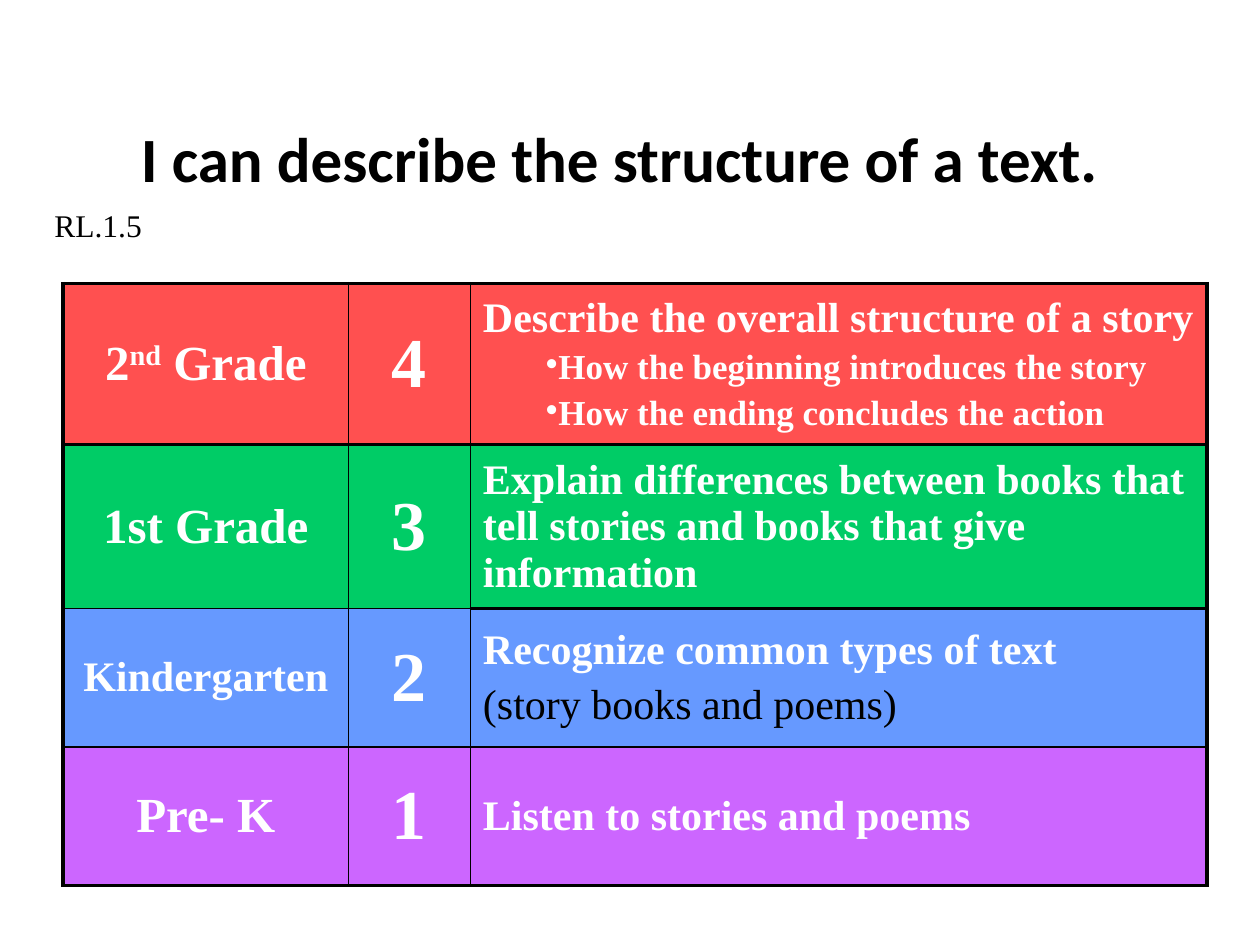
from dataclasses import dataclass

from lxml import etree
from pptx import Presentation
from pptx import util as u
from pptx.dml.color import RGBColor
from pptx.enum import text
from pptx.oxml import ns


@dataclass(frozen=True)
class Theme:
    heading_font: str = "Calibri"
    body_font: str = "Times New Roman"
    black: str = "000000"
    white: str = "FFFFFF"
    red: str = "FF5050"
    green: str = "00CC66"
    blue: str = "6699FF"
    purple: str = "CC66FF"
    title: int = 36
    score: int = 40
    grade: int = 28
    body: int = 24
    detail: int = 20
    label: int = 18
    thin: float = 1
    medium: float = 1.5
    thick: float = 2.25


@dataclass(frozen=True)
class Line:
    runs: tuple
    size: int
    color: str = Theme.white
    bold: bool = True
    centered: bool = False
    bullet: bool = False
    font: str = Theme.body_font


class SlideBuilder:
    def __init__(self, presentation, theme):
        self.theme = theme
        self.slide = presentation.slides.add_slide(presentation.slide_layouts[6])

    def add_lines(self, frame, lines):
        frame.word_wrap = True
        for index, line in enumerate(lines):
            paragraph = frame.add_paragraph() if index else frame.paragraphs[0]
            paragraph.alignment = text.PP_ALIGN.CENTER if line.centered else text.PP_ALIGN.LEFT
            paragraph.space_before = u.Pt(line.size * 0.2 if index else 0)
            if line.bullet:
                self.add_bullet(paragraph)
            for words, baseline in line.runs:
                run = paragraph.add_run()
                run.text = words
                run.font.name = line.font
                run.font.size = u.Pt(line.size)
                run.font.bold = line.bold
                run.font.color.rgb = RGBColor.from_string(line.color)
                if baseline:
                    run._r.get_or_add_rPr().set("baseline", str(baseline * 1000))

    def add_bullet(self, paragraph):
        paragraph.level = 1
        properties = paragraph._p.get_or_add_pPr()
        properties.set("marL", str(u.Pt(36)))
        properties.set("indent", "0")
        etree.SubElement(properties, ns.qn("a:buChar")).set("char", "•")

    def add_text_box(self, left, top, width, height, line, anchor):
        shape = self.slide.shapes.add_textbox(u.Pt(left), u.Pt(top), u.Pt(width), u.Pt(height))
        shape.text_frame.vertical_anchor = anchor
        self.add_lines(shape.text_frame, [line])

    def add_borders(self, cell, widths):
        properties = cell._tc.get_or_add_tcPr()
        for index, (side, width) in enumerate(zip("LRTB", widths)):
            border = etree.Element(ns.qn(f"a:ln{side}"), w=str(u.Pt(width)))
            fill = etree.SubElement(border, ns.qn("a:solidFill"))
            etree.SubElement(fill, ns.qn("a:srgbClr")).set("val", self.theme.black)
            properties.insert(index, border)

    def add_table(self, left, top, column_widths, row_heights, rows):
        theme = self.theme
        table = self.slide.shapes.add_table(
            len(row_heights), len(column_widths), u.Pt(left), u.Pt(top),
            u.Pt(sum(column_widths)), u.Pt(sum(row_heights))).table
        table.first_row = table.horz_banding = False
        for column, width in zip(table.columns, column_widths):
            column.width = u.Pt(width)
        for row, height in zip(table.rows, row_heights):
            row.height = u.Pt(height)
        verticals = [theme.thick, theme.thin, theme.thin, theme.thick]
        for row_index, (color, cells) in enumerate(rows):
            for column_index, lines in enumerate(cells):
                cell = table.cell(row_index, column_index)
                cell.fill.solid()
                cell.fill.fore_color.rgb = RGBColor.from_string(color)
                cell.vertical_anchor = text.MSO_ANCHOR.MIDDLE
                inner = theme.medium if column_index == 2 else theme.thin
                horizontals = [theme.thick, theme.medium, inner, inner, theme.medium]
                self.add_borders(cell, verticals[column_index:column_index + 2]
                                 + horizontals[row_index:row_index + 2])
                self.add_lines(cell.text_frame, lines)


def plain(words, size, **style):
    return Line(((words, 0),), size, **style)


def main():
    theme = Theme()
    presentation = Presentation()
    presentation.slide_width, presentation.slide_height = u.Pt(720), u.Pt(540)
    builder = SlideBuilder(presentation, theme)

    builder.add_text_box(18, 54, 672, 72, plain(
        "I can describe the structure of a text.", theme.title, color=theme.black,
        centered=True, font=theme.heading_font), text.MSO_ANCHOR.MIDDLE)

    second_grade = Line((("2", 0), ("nd", 30), (" Grade", 0)), theme.grade, centered=True)
    first_grade = plain("1st Grade", theme.grade, centered=True)
    kindergarten = plain("Kindergarten", theme.body, centered=True)
    pre_k = plain("Pre- K", theme.grade, centered=True)
    levels = [
        (theme.red, second_grade, [
            plain("Describe the overall structure of a story", theme.body),
            plain("How the beginning introduces the story", theme.detail, bullet=True),
            plain("How the ending concludes the action", theme.detail, bullet=True)]),
        (theme.green, first_grade, [
            plain("Explain differences between books that tell stories "
                  "and books that give information", theme.body)]),
        (theme.blue, kindergarten, [
            plain("Recognize common types of text", theme.body),
            plain("(story books and poems)", theme.body, color=theme.black, bold=False)]),
        (theme.purple, pre_k, [plain("Listen to stories and poems", theme.body)]),
    ]
    rows = [
        (color, [[grade], [plain(str(len(levels) - index), theme.score, centered=True)], skills])
        for index, (color, grade, skills) in enumerate(levels)
    ]
    builder.add_table(36, 162, [163.2, 69.6, 421], [79.2, 93.6, 79.2, 79.2], rows)

    builder.add_text_box(24, 114, 102, 29, plain(
        "RL.1.5", theme.label, color=theme.black, bold=False), text.MSO_ANCHOR.TOP)
    presentation.save("out.pptx")


if __name__ == "__main__":
    main()
